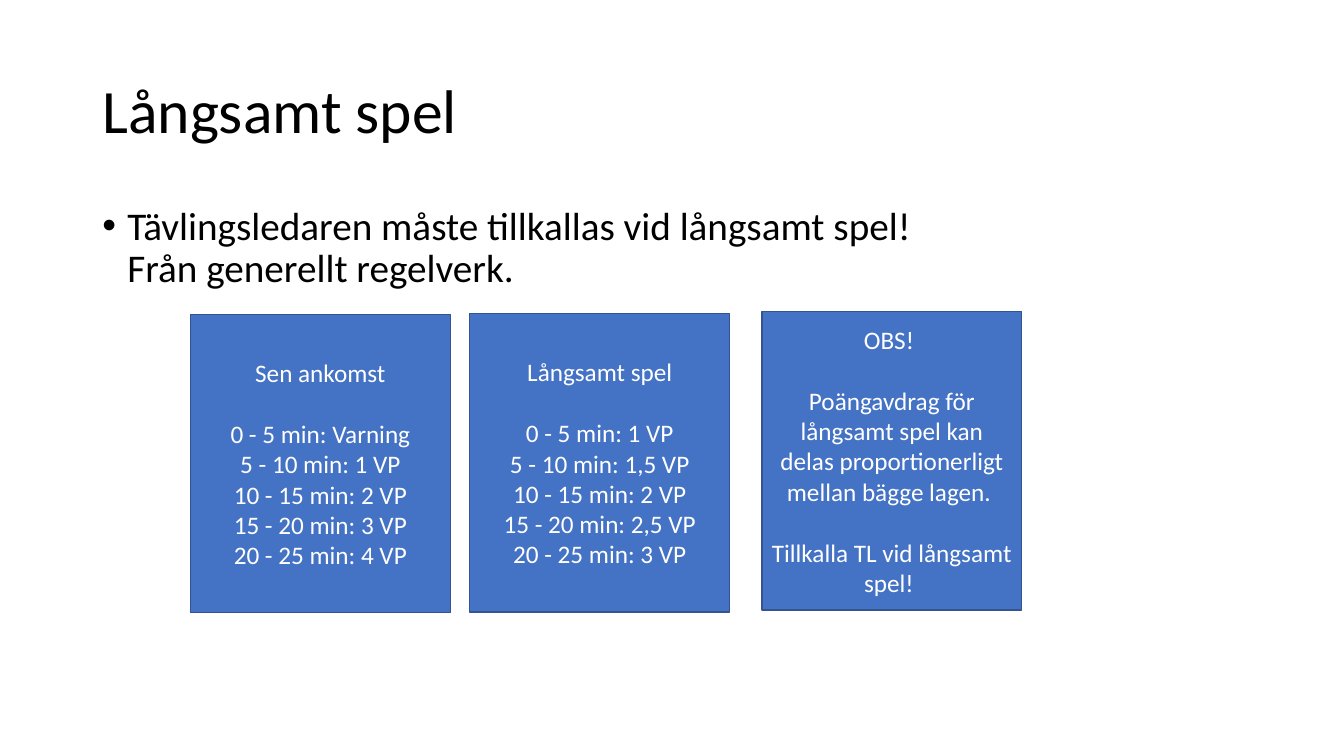
from lxml import etree
from pptx import Presentation
from pptx.dml.color import RGBColor
from pptx.enum.shapes import MSO_SHAPE as Shape
from pptx.enum.text import MSO_ANCHOR as Anchor, PP_ALIGN as Align
from pptx.oxml.ns import qn
from pptx.util import Cm, Pt

# Content
TITLE = "Långsamt spel"
BULLET = "Tävlingsledaren måste tillkallas vid långsamt spel! \nFrån generellt regelverk."
# Each card: left and top in cm, then groups of lines set apart by a gap
CARDS = [
    (4.8, 7.92, [
        ["Sen ankomst"],
        ["0 - 5 min: Varning", "5 - 10 min: 1 VP", "10 - 15 min: 2 VP",
         "15 - 20 min: 3 VP", "20 - 25 min: 4 VP"],
    ]),
    (11.84, 7.9, [
        ["Långsamt spel"],
        ["0 - 5 min: 1 VP", "5 - 10 min: 1,5 VP", "10 - 15 min: 2 VP",
         "15 - 20 min: 2,5 VP", "20 - 25 min: 3 VP"],
    ]),
    (19.2, 7.85, [
        ["OBS! "],
        ["Poängavdrag för långsamt spel kan delas proportionerligt mellan bägge lagen. "],
        ["Tillkalla TL vid långsamt spel! "],
    ]),
]

# Look
COLORS = {"text": "000000", "card": "4472C4", "edge": "325491", "card_text": "FFFFFF"}
FONT = "Calibri"
MARGIN, WIDTH = 2.33, 29.21
CARD_WIDTH, CARD_HEIGHT = 6.55, 7.52
GROUP_GAP = 22  # one line of 18 pt text
BULLET_INDENT = Cm(0.63)


def color(name):
    return RGBColor.from_string(COLORS[name])


def write(box, groups, size, ink="text", align=Align.LEFT, anchor=Anchor.TOP,
          line_spacing=1.0, space_before=0, gap=0, bullet=False):
    frame = box.text_frame
    frame.word_wrap = True
    frame.vertical_anchor = anchor
    para = None
    for group_index, lines in enumerate(groups):
        for line_index, text in enumerate(lines):
            para = frame.add_paragraph() if para else frame.paragraphs[0]
            para.alignment = align
            para.line_spacing = line_spacing
            opens_group = group_index > 0 and line_index == 0
            para.space_before = Pt(gap if opens_group else space_before)
            for part_index, part in enumerate(text.split("\n")):
                if part_index:
                    para.add_line_break()
                span = para.add_run()
                span.text = part
                span.font.size = Pt(size)
                span.font.name = FONT
                span.font.color.rgb = color(ink)
            if bullet:
                props = para._p.get_or_add_pPr()
                props.set("marL", str(BULLET_INDENT))
                props.set("indent", str(-BULLET_INDENT))
                etree.SubElement(props, qn("a:buFont")).set("typeface", "Arial")
                etree.SubElement(props, qn("a:buChar")).set("char", "•")


def main():
    deck = Presentation()
    deck.slide_width, deck.slide_height = Cm(33.87), Cm(19.05)
    page = deck.slides.add_slide(deck.slide_layouts[6])

    # Title and bullet
    title = page.shapes.add_textbox(Cm(MARGIN), Cm(1.02), Cm(WIDTH), Cm(3.68))
    write(title, [[TITLE]], 44, anchor=Anchor.MIDDLE, line_spacing=0.9)
    body = page.shapes.add_textbox(Cm(MARGIN), Cm(5.08), Cm(WIDTH), Cm(12.09))
    write(body, [[BULLET]], 28, line_spacing=0.9, space_before=10, bullet=True)

    # Cards
    for left, top, groups in CARDS:
        card = page.shapes.add_shape(Shape.RECTANGLE, Cm(left), Cm(top),
                                     Cm(CARD_WIDTH), Cm(CARD_HEIGHT))
        card.shadow.inherit = False
        card.fill.solid()
        card.fill.fore_color.rgb = color("card")
        card.line.color.rgb = color("edge")
        card.line.width = Pt(1)
        write(card, groups, 18, ink="card_text", align=Align.CENTER,
              anchor=Anchor.MIDDLE, gap=GROUP_GAP)

    deck.save("out.pptx")


if __name__ == "__main__":
    main()
